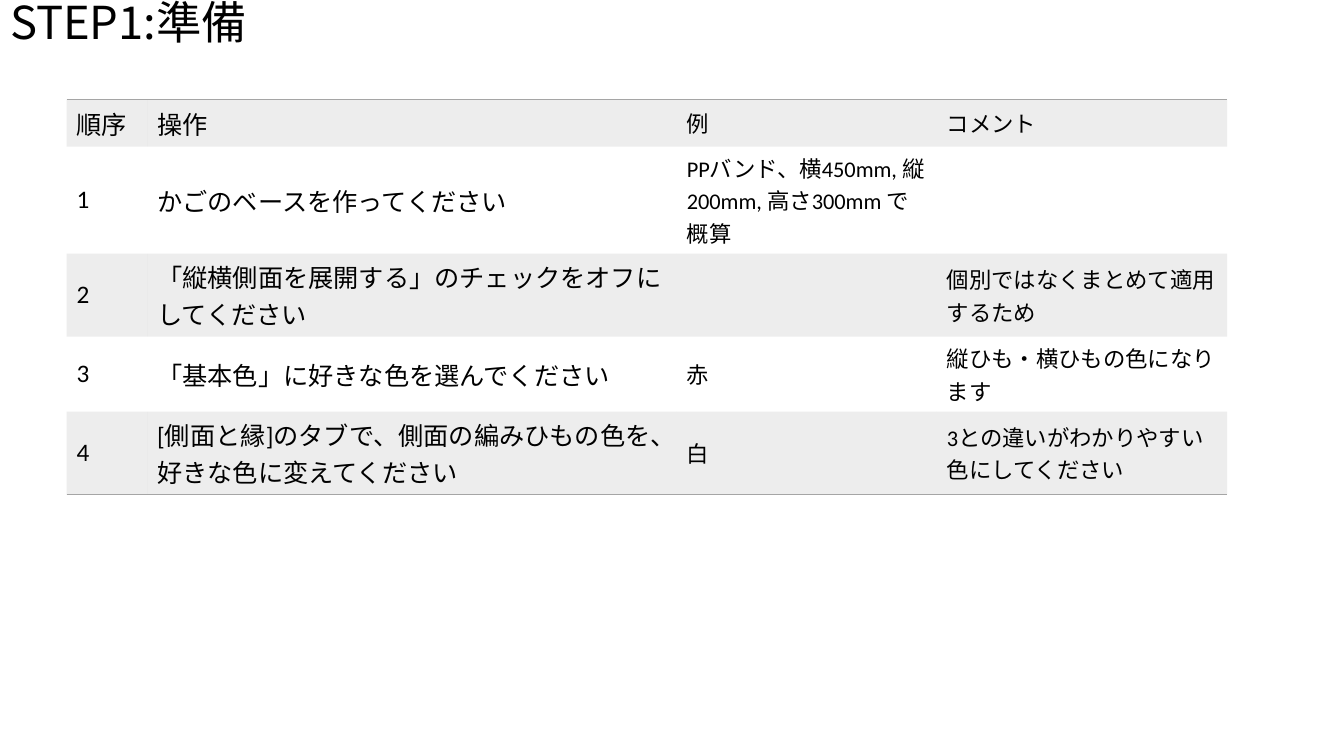
from lxml.etree import SubElement
from pptx import Presentation
from pptx.dml.color import RGBColor
from pptx.enum.text import MSO_ANCHOR, MSO_AUTO_SIZE, PP_ALIGN
from pptx.oxml import parse_xml
from pptx.oxml.ns import nsdecls, qn
from pptx.util import Inches, Pt

MIDDLE = MSO_ANCHOR.MIDDLE
NO_FIT = MSO_AUTO_SIZE.NONE
LEFT = PP_ALIGN.LEFT
PLAIN = "{2D5ABB26-0587-4C30-8999-92F81FD0307C}"

STEPS = [
    ("順序", "操作", "例", "コメント"),
    ("1", "かごのベースを作ってください",
     "PPバンド、横450mm, 縦200mm, 高さ300mm で概算", ""),
    ("2", "「縦横側面を展開する」のチェックをオフにしてください", "",
     "個別ではなくまとめて適用するため"),
    ("3", "「基本色」に好きな色を選んでください", "赤",
     "縦ひも・横ひもの色になります"),
    ("4", "[側面と縁]のタブで、側面の編みひもの色を、好きな色に変えてください",
     "白", "3との違いがわかりやすい色にしてください"),
]
SIZES = (18, 18, 16, 16)


def tint(code):
    """Turn a hex string into a colour."""
    return RGBColor.from_string(code)


def write(frame, text, size, font, asian, color, space=1.0):
    """Put one left-aligned, formatted line of text into a frame."""
    para = frame.paragraphs[0]
    para.alignment = LEFT
    para.line_spacing = space
    run = para.add_run()
    run.text = text
    run.font.size = Pt(size)
    run.font.name = font
    run.font.color.rgb = tint(color)
    SubElement(run.font._element, qn("a:ea"), typeface=asian)


class Deck:
    """Style and current slide, with lengths in percent of the slide."""

    font, asian = "Calibri", "Noto Sans CJK JP"
    ink, gray, alpha = "000000", "A5A5A5", 20

    def __init__(self, wide, high):
        """Open a deck with one title-only slide."""
        self.file = Presentation()
        self.file.slide_width = Inches(wide)
        self.file.slide_height = Inches(high)
        self.slide = self.file.slides.add_slide(self.file.slide_layouts[5])

    def across(self, share):
        """Give a share of the slide's width."""
        return int(self.file.slide_width * share / 100)

    def down(self, share):
        """Give a share of the slide's height."""
        return int(self.file.slide_height * share / 100)

    def title(self, text, left, top, wide, high, size):
        """Place and fill the title."""
        box = self.slide.shapes.title
        box.left, box.top = self.across(left), self.down(top)
        box.width, box.height = self.across(wide), self.down(high)
        frame = box.text_frame
        frame.auto_size = NO_FIT
        frame.vertical_anchor = MIDDLE
        write(frame, text, size=size, font=self.asian, asian=self.asian,
              color=self.ink, space=0.9)

    def edge(self, cell, side):
        """Draw a thin line on one side of a cell."""
        cell._tc.get_or_add_tcPr().insert(0, parse_xml(
            f'<a:{side} {nsdecls("a")} w="12700"><a:solidFill>'
            f'<a:srgbClr val="{self.gray}"/></a:solidFill></a:{side}>'))

    def shade(self, cell):
        """Fill a cell with see-through gray."""
        cell.fill.solid()
        cell.fill.fore_color.rgb = tint(self.gray)
        color = cell._tc.tcPr.find(".//" + qn("a:srgbClr"))
        SubElement(color, qn("a:alpha"), val=str(self.alpha * 1000))

    def table(self, data, left, top, cols, rows, sizes):
        """Add a banded table with a line above and below."""
        grid = self.slide.shapes.add_table(
            len(rows), len(cols), self.across(left), self.down(top),
            self.across(sum(cols)), self.down(sum(rows))).table
        grid.first_row = grid.horz_banding = False
        grid._tbl.tblPr.find(qn("a:tableStyleId")).text = PLAIN
        for col, share in zip(grid.columns, cols):
            col.width = self.across(share)
        for row, share in zip(grid.rows, rows):
            row.height = self.down(share)
        for r, line in enumerate(data):
            for c, text in enumerate(line):
                cell = grid.cell(r, c)
                cell.vertical_anchor = MIDDLE
                if text:
                    write(cell.text_frame, text, size=sizes[c],
                          font=self.font, asian=self.asian, color=self.ink)
                if r % 2:
                    cell.fill.background()
                else:
                    self.shade(cell)
                if r == 0:
                    self.edge(cell, "lnT")
                if r == len(data) - 1:
                    self.edge(cell, "lnB")


def main():
    """Build the preparation slide."""
    deck = Deck(13.33, 7.5)
    deck.title("STEP1:準備", left=0, top=0, wide=86.25, high=6.67, size=32.4)
    deck.table(STEPS, left=4.95, top=13.2, cols=(6, 39.4, 19.35, 21.6),
               rows=(6.2, 14.1, 11, 9.9, 10.9), sizes=SIZES)
    deck.file.save("out.pptx")


if __name__ == "__main__":
    main()
